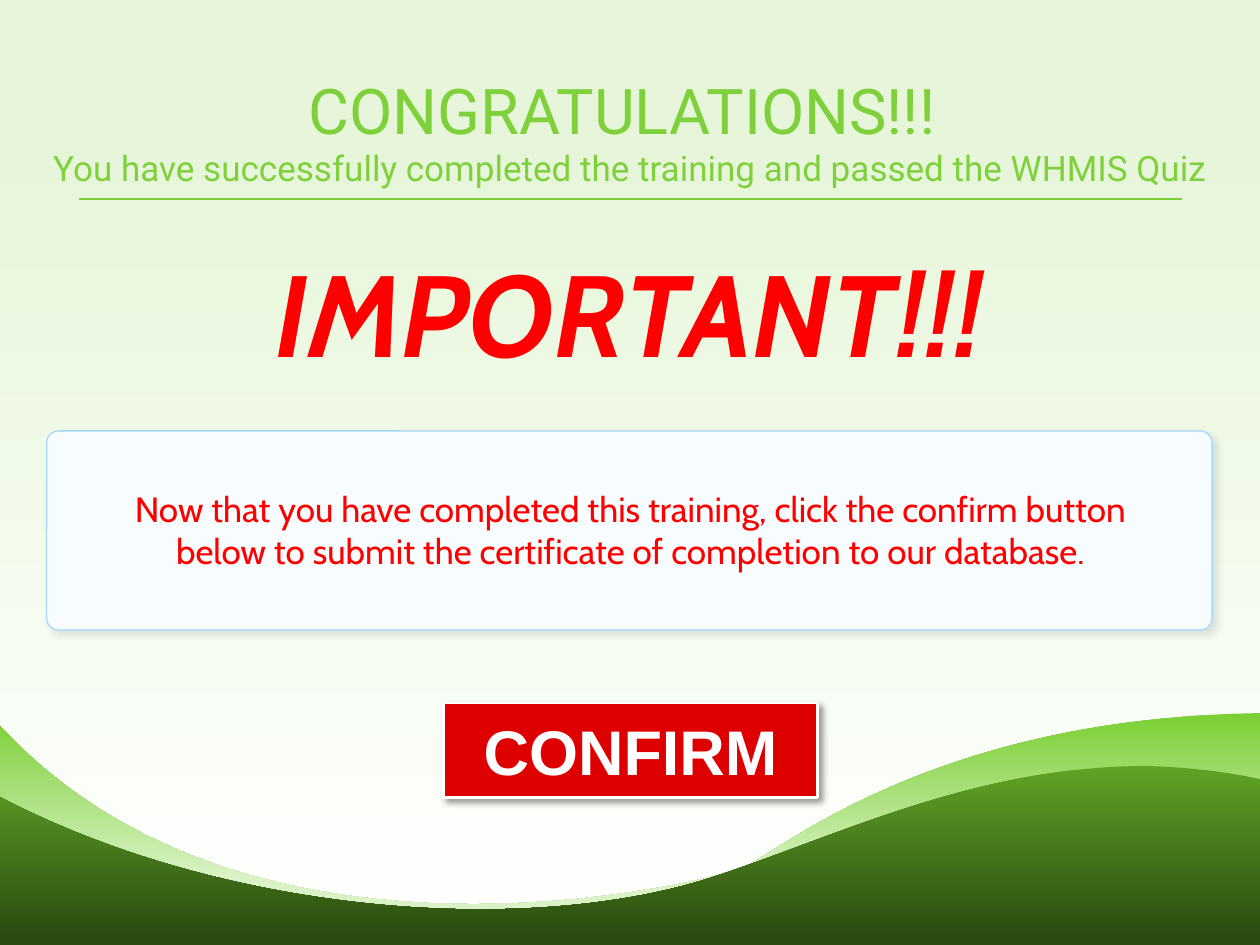
from lxml.etree import Element, SubElement
from pptx import Presentation
from pptx.dml.color import RGBColor
from pptx.enum.shapes import MSO_CONNECTOR, MSO_SHAPE
from pptx.enum.text import MSO_ANCHOR, MSO_AUTO_SIZE, PP_ALIGN
from pptx.oxml.ns import qn
from pptx.util import Inches, Pt

WHITE = RGBColor(0xFF, 0xFF, 0xFF)
MINT = RGBColor(0xE7, 0xF6, 0xDA)
LIME = RGBColor(0x7B, 0xCF, 0x34)
PALE_LIME = RGBColor(0xDA, 0xF2, 0xC6)
LEAF = RGBColor(0x5F, 0xA3, 0x26)
FOREST = RGBColor(0x2B, 0x4A, 0x11)
TITLE_GREEN = RGBColor(0x7F, 0xD1, 0x3B)
RULE_GREEN = RGBColor(0x7C, 0xD0, 0x36)
RED = RGBColor(0xFF, 0x00, 0x00)
BUTTON_RED = RGBColor(0xDE, 0x00, 0x00)
PANEL_FILL = RGBColor(0xF7, 0xFD, 0xFF)
PANEL_EDGE = RGBColor(0xA7, 0xD6, 0xFF)

# Outlines in inches: one pair is a corner, three pairs are a Bezier curve
LIGHT_WAVE = [
    [(10.02, 5.66)], [(10.01, 7.5)], [(0, 7.5)], [(0, 5.76)],
    [(1.95, 7.89), (5.54, 7.02), (5.89, 6.89)],
    [(6.14, 6.8), (7.37, 5.69), (10.02, 5.66)],
]
DARK_WAVE = [
    [(9.12, 6.08)],
    [(9.41, 6.09), (9.71, 6.12), (10.02, 6.19)],
    [(10.02, 7.5)], [(0, 7.5)],
    [(-0.01, 7.17), (-0.01, 6.87), (-0.01, 6.32)],
    [(1.82, 7.28), (4.27, 7.44), (5.72, 6.94)],
    [(6.68, 6.62), (7.79, 6.07), (9.12, 6.08)],
]


def set_gradient(fill, angle, stops):
    fill.gradient()
    fill.gradient_angle = angle
    for stop, (position, color) in zip(fill.gradient_stops, stops):
        stop.position = position
        stop.color.rgb = color


def bend_segments(wave, outline):
    """Turn the straight segments that have handles into Bezier curves."""
    segments = list(wave._element.iter(qn("a:lnTo")))
    for segment, (*handles, _) in zip(segments, outline[1:]):
        if handles:
            segment.tag = qn("a:cubicBezTo")
        for index, (x, y) in enumerate(handles):
            handle = Element(qn("a:pt"), x=str(Inches(x) - wave.left),
                             y=str(Inches(y) - wave.top))
            segment.insert(index, handle)


def add_wave(slide, outline, stops):
    corners = [tuple(map(Inches, part[-1])) for part in outline]
    builder = slide.shapes.build_freeform(*corners[0])
    builder.add_line_segments(corners[1:], close=True)
    wave = builder.convert_to_shape()
    bend_segments(wave, outline)
    wave.shadow.inherit = False
    wave.line.fill.background()
    set_gradient(wave.fill, 270, stops)


def add_shadow(shape, opacity):
    shape.shadow.inherit = False
    effects = shape._element.spPr.find(qn("a:effectLst"))
    shadow = SubElement(effects, qn("a:outerShdw"), blurRad=str(Pt(4)),
                        dist=str(Pt(3)), dir=str(45 * 60000), rotWithShape="0")
    color = SubElement(shadow, qn("a:srgbClr"), val="000000")
    SubElement(color, qn("a:alpha"), val=str(opacity * 1000))


def add_card(slide, preset, box, fill, edge, edge_width, opacity):
    card = slide.shapes.add_shape(preset, *map(Inches, box))
    card.fill.solid()
    card.fill.fore_color.rgb = fill
    card.line.color.rgb = edge
    card.line.width = Pt(edge_width)
    add_shadow(card, opacity)
    return card


def add_run(paragraph, text, color, **formats):
    paragraph.alignment = PP_ALIGN.CENTER
    run = paragraph.add_run()
    run.text = text
    run.font.color.rgb = color
    for name, value in formats.items():
        setattr(run.font, name, value)


def add_label(slide, box, text, color, **formats):
    frame = slide.shapes.add_textbox(*map(Inches, box)).text_frame
    frame.word_wrap = True
    frame.auto_size = MSO_AUTO_SIZE.SHAPE_TO_FIT_TEXT
    add_run(frame.paragraphs[0], text, color, **formats)


def fill_title(title):
    box = {"left": 0, "top": 0.47, "width": 10, "height": 1.03}
    for name, value in box.items():
        setattr(title, name, Inches(value))
    frame = title.text_frame
    layout = {"margin_left": 0, "margin_right": 0, "margin_top": 0,
              "margin_bottom": 0, "word_wrap": True,
              "auto_size": MSO_AUTO_SIZE.NONE,
              "vertical_anchor": MSO_ANCHOR.BOTTOM}
    for name, value in layout.items():
        setattr(frame, name, value)
    heading = frame.paragraphs[0]
    add_run(heading, "CONGRATULATIONS!!! ", TITLE_GREEN, name="Roboto", size=Pt(36))
    heading.add_line_break()
    add_run(heading,
            "You have successfully completed the training and passed the WHMIS Quiz",
            TITLE_GREEN, name="Roboto", size=Pt(20))


def add_rule(slide, left, right, y):
    rule = slide.shapes.add_connector(
        MSO_CONNECTOR.STRAIGHT, *map(Inches, (left, y, right, y)))
    rule.line.color.rgb = RULE_GREEN
    rule.line.width = Pt(0.75)
    SubElement(rule._element.spPr, qn("a:effectLst"))


def main():
    deck = Presentation()
    deck.slide_width, deck.slide_height = Inches(10), Inches(7.5)
    slide = deck.slides.add_slide(deck.slide_layouts[5])

    # Backdrop
    set_gradient(slide.background.fill, 90, [(0, WHITE), (0.85, MINT)])
    add_wave(slide, LIGHT_WAVE, [(0, LIME), (0.71, PALE_LIME)])
    add_wave(slide, DARK_WAVE, [(0, LEAF), (0.96, FOREST)])

    # Notice
    panel = add_card(slide, MSO_SHAPE.ROUNDED_RECTANGLE, (0.37, 3.42, 9.25, 1.58),
                     PANEL_FILL, PANEL_EDGE, 0.75, 10)
    panel.adjustments[0] = 0.06
    add_label(slide, (0.63, 3.82, 8.75, 0.77),
              "Now that you have completed this training, click the confirm button "
              "below to submit the certificate of completion to our database.",
              RED, name="Cabin", size=Pt(20))
    add_label(slide, (1.33, 1.87, 7.33, 1.21), "IMPORTANT!!!", RED,
              name="Cabin", size=Pt(66), bold=True, italic=True)

    # Button
    button = add_card(slide, MSO_SHAPE.RECTANGLE, (3.52, 5.58, 2.97, 0.75),
                      BUTTON_RED, WHITE, 1.5, 40)
    button.text_frame.vertical_anchor = MSO_ANCHOR.MIDDLE
    add_run(button.text_frame.paragraphs[0], "CONFIRM", WHITE,
            name="Arial", size=Pt(36), bold=True)

    # Heading
    fill_title(slide.shapes.title)
    add_rule(slide, 0.63, 9.38, 1.58)

    deck.save("out.pptx")


if __name__ == "__main__":
    main()
